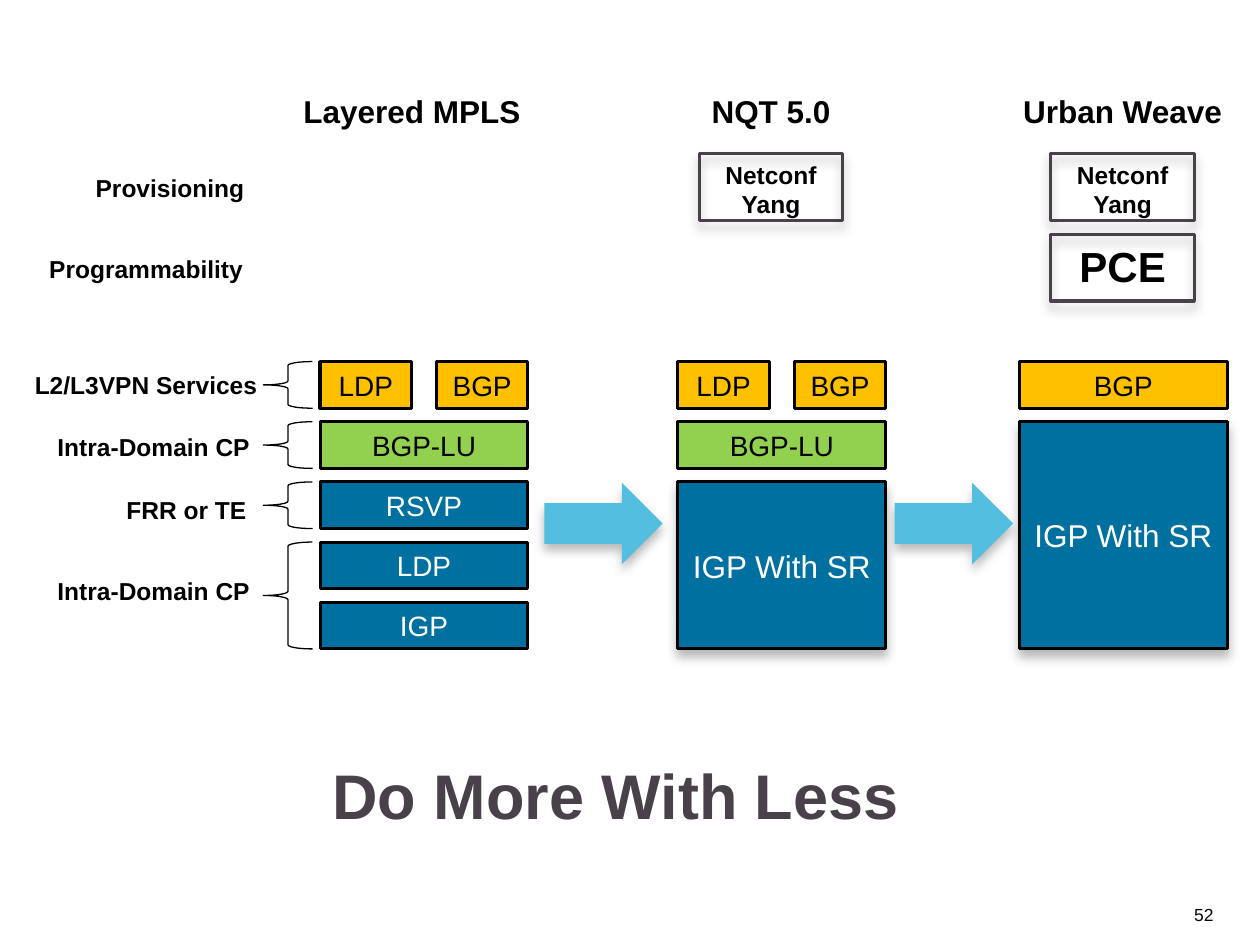
from collections import namedtuple

from lxml.etree import SubElement
from pptx import Presentation
from pptx.dml.color import RGBColor
from pptx.enum.shapes import MSO_SHAPE as Shape
from pptx.enum.text import MSO_ANCHOR as Anchor, PP_ALIGN as Align
from pptx.oxml.ns import qn
from pptx.util import Inches, Pt

COLORS = {
    "ink": "000000", "white": "FFFFFF", "slate": "494149", "number": "040404",
    "service": "FFC000", "label_unicast": "92D050", "core": "0070A0", "arrow": "54BEE0",
}
Box = namedtuple("Box", "left top width height")
Layer = namedtuple("Layer", "name color row rows half", defaults=(1, None))

COLUMNS = (2.54, 5.38, 8.09)
HEADING_CENTERS = (3.27, 6.12, 8.91)
COLUMN_WIDTH, HEADING_WIDTH = 1.65, 2.1
STACK_TOP, STACK_BOTTOM, ROW_HEIGHT, ROW_COUNT = 2.87, 5.15, 0.37, 5
ROW_PITCH = (STACK_BOTTOM - STACK_TOP - ROW_HEIGHT) / (ROW_COUNT - 1)
BADGE_TOP, BADGE_PITCH = 1.22, 0.64
BADGE_WIDTH, BADGE_HEIGHT = 1.14, 0.53
HALF_SHARE = 0.44

SERVICES = (Layer("LDP", "service", 0, half=0), Layer("BGP", "service", 0, half=1))
UNICAST = Layer("BGP-LU", "label_unicast", 1)
ARCHITECTURES = (
    ("Layered MPLS", (), SERVICES + (
        UNICAST, Layer("RSVP", "core", 2), Layer("LDP", "core", 3), Layer("IGP", "core", 4))),
    ("NQT 5.0", (("Netconf\nYang", 14),), SERVICES + (
        UNICAST, Layer("IGP With SR", "core", 2, 3))),
    ("Urban Weave", (("Netconf\nYang", 14), ("PCE", 24)), (
        Layer("BGP", "service", 0), Layer("IGP With SR", "core", 1, 4))),
)
LABELS = (
    ("Provisioning", 1.35, 1.32), ("Programmability", 1.16, 1.97),
    ("L2/L3VPN Services", 1.16, 2.89), ("Intra-Domain CP", 1.22, 3.38),
    ("FRR or TE", 1.48, 3.88), ("Intra-Domain CP", 1.22, 4.52),
)
BRACED_ROWS = ((0, 1), (1, 1), (2, 1), (3, 2))


def color(name):
    """Return the palette colour with this name."""
    return RGBColor.from_string(COLORS[name])


def row_box(left, row, rows=1, width=COLUMN_WIDTH):
    """Return the box that spans the given rows of the protocol grid."""
    height = (rows - 1) * ROW_PITCH + ROW_HEIGHT
    return Box(left, STACK_TOP + row * ROW_PITCH, width, height)


def centered_box(center, top, width, height):
    """Return the box whose middle lies at the given horizontal position."""
    return Box(center - width / 2, top, width, height)


def write(shape, text, size, ink="ink", bold=False, align=Align.CENTER,
          anchor=Anchor.TOP, wrap=False):
    """Fill a shape with text in one format."""
    frame = shape.text_frame
    frame.text = text
    frame.word_wrap = wrap
    frame.vertical_anchor = anchor
    for paragraph in frame.paragraphs:
        paragraph.alignment = align
        for run in paragraph.runs:
            run.font.name = "Arial"
            run.font.size = Pt(size)
            run.font.bold = bold
            run.font.color.rgb = color(ink)
    return frame


def add_text(slide, box, text, size, **style):
    """Place a text box."""
    return write(slide.shapes.add_textbox(*map(Inches, box)), text, size, **style)


def add_block(slide, kind, box, fill=None, line=None, weight=1.75, shadow=False):
    """Place a preset shape with its fill, outline and optional soft shadow."""
    block = slide.shapes.add_shape(kind, *map(Inches, box))
    if fill:
        block.fill.solid()
        block.fill.fore_color.rgb = color(fill)
    else:
        block.fill.background()
    if line:
        block.line.color.rgb = color(line)
        block.line.width = Pt(weight)
    else:
        block.line.fill.background()
    block.shadow.inherit = False
    if shadow:
        effects = block.element.spPr.find(qn("a:effectLst"))
        outer = SubElement(effects, qn("a:outerShdw"), blurRad=str(Pt(6)),
                           dist=str(Pt(4)), dir=str(90 * 60000), rotWithShape="0")
        tint = SubElement(outer, qn("a:srgbClr"), val=COLORS["ink"])
        SubElement(tint, qn("a:alpha"), val="27000")
    return block


def add_stack(slide, left, layers):
    """Draw the protocol layers of one architecture."""
    for layer in layers:
        box = row_box(left, layer.row, layer.rows)
        if layer.half is not None:
            offset = layer.half * (1 - HALF_SHARE) * COLUMN_WIDTH
            box = box._replace(left=left + offset, width=HALF_SHARE * COLUMN_WIDTH)
        tall = layer.rows > 1
        block = add_block(slide, Shape.RECTANGLE, box, layer.color, "ink", shadow=tall)
        write(block, layer.name, 18 if tall else 16, anchor=Anchor.MIDDLE,
              ink="white" if layer.color == "core" else "ink")


def add_badges(slide, center, badges):
    """Draw the outlined management badges above one stack."""
    for index, (name, size) in enumerate(badges):
        box = centered_box(center, BADGE_TOP + index * BADGE_PITCH, BADGE_WIDTH, BADGE_HEIGHT)
        add_block(slide, Shape.RECTANGLE, box, line="slate", shadow=True)
        add_text(slide, box, name, size, bold=True)


def add_architecture(slide, left, center, name, badges, layers):
    """Draw one column: heading, badges and protocol stack."""
    add_text(slide, centered_box(center, 0.68, HEADING_WIDTH, 0.4), name, 18, bold=True)
    add_badges(slide, center, badges)
    add_stack(slide, left, layers)


def add_labels(slide, width):
    """Write the layer names and the braces that tie them to the rows."""
    for text, center, top in LABELS:
        add_text(slide, centered_box(center, top, width, 0.32), text, 14, bold=True)
    for row, rows in BRACED_ROWS:
        add_block(slide, Shape.LEFT_BRACE, row_box(2.09, row, rows, 0.39),
                  line="ink", weight=0.75)


def add_arrows(slide):
    """Draw the steps from one architecture to the next."""
    for left in (4.32, 7.1):
        add_block(slide, Shape.RIGHT_ARROW, Box(left, 3.83, 0.94, 0.65), "arrow", shadow=True)


def add_footer(slide):
    """Write the closing message and the slide number."""
    message = add_text(slide, Box(COLUMNS[0], 5.73, 7.2, 0.92), "Do More With Less", 36,
                       ink="slate", bold=True, align=Align.LEFT, anchor=Anchor.BOTTOM, wrap=True)
    message.paragraphs[0].line_spacing = 0.8
    add_text(slide, Box(9.13, 7.13, 0.6, 0.26), "52", 10, ink="number",
             align=Align.RIGHT, anchor=Anchor.BOTTOM)


def main():
    """Build the slide and save it."""
    deck = Presentation()
    deck.slide_width, deck.slide_height = Inches(10), Inches(7.5)
    slide = deck.slides.add_slide(deck.slide_layouts[6])
    for left, center, architecture in zip(COLUMNS, HEADING_CENTERS, ARCHITECTURES):
        add_architecture(slide, left, center, *architecture)
    add_arrows(slide)
    add_labels(slide, 2.1)
    add_footer(slide)
    deck.save("out.pptx")


if __name__ == "__main__":
    main()
